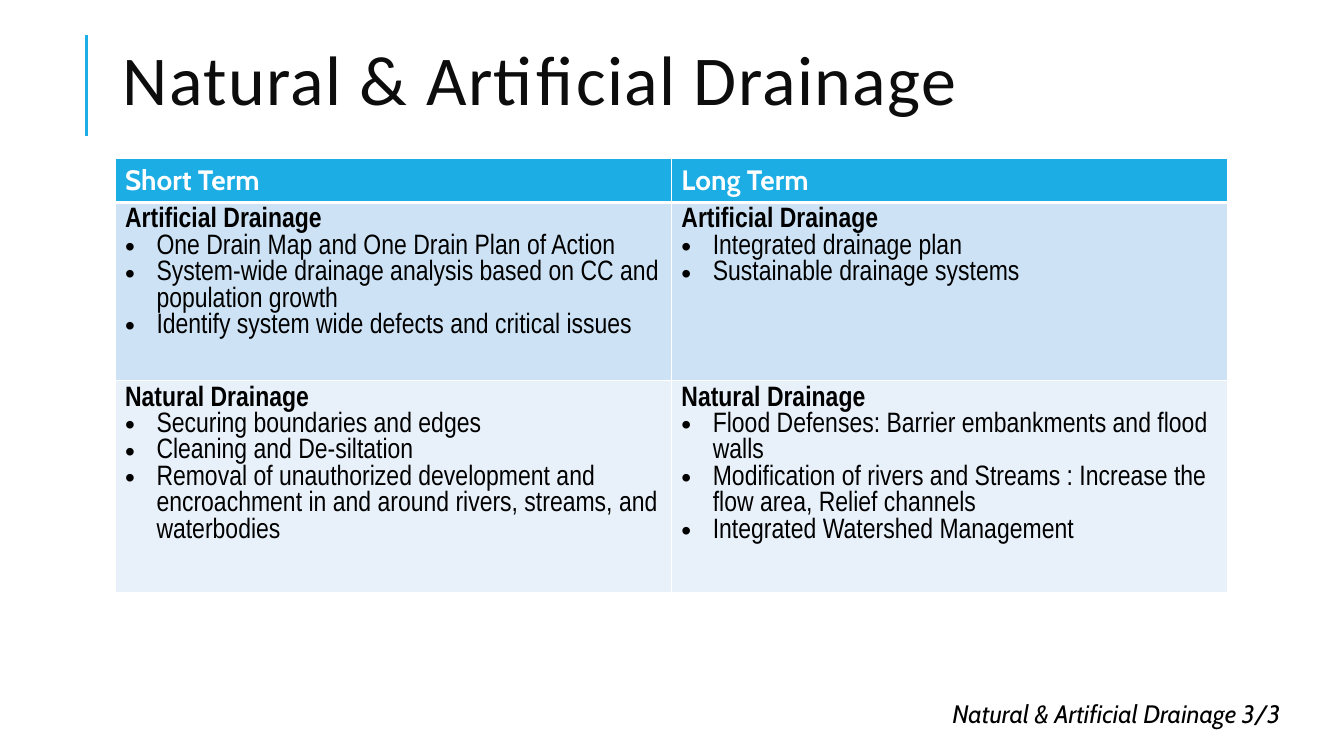
from lxml.etree import SubElement
from pptx import Presentation
from pptx.dml.color import RGBColor
from pptx.enum.shapes import MSO_CONNECTOR as Connector
from pptx.enum.text import MSO_ANCHOR as Anchor, MSO_AUTO_SIZE as AutoSize
from pptx.oxml import parse_xml
from pptx.oxml.ns import nsdecls, qn
from pptx.util import Cm, Pt

WHITE = RGBColor(0xFF, 0xFF, 0xFF)
BLACK = RGBColor(0x00, 0x00, 0x00)
INK = RGBColor(0x0D, 0x0D, 0x0D)
BLUE = RGBColor(0x1C, 0xAD, 0xE4)
BAND_DARK = RGBColor(0xCD, 0xE3, 0xF5)
BAND_LIGHT = RGBColor(0xE8, 0xF1, 0xFA)

TITLE_FONT = {"name": "Calibri", "size": Pt(50), "color": INK}
HEADER_FONT = {"name": "Cabin", "size": Pt(20), "bold": True, "color": WHITE}
GROUP_FONT = {"name": "Arial Narrow", "size": Pt(20), "bold": True, "color": BLACK}
ITEM_FONT = {**GROUP_FONT, "bold": False}
FOOTER_FONT = {"name": "Cabin", "size": Pt(18), "italic": True, "color": BLACK}

TERMS = ["Short Term", "Long Term"]
ACTIONS = [
    ("Artificial Drainage", BAND_DARK, Cm(4.24), [
        ["One Drain Map and One Drain Plan of Action",
         "System‐wide drainage analysis based on CC and population growth",
         "Identify system wide defects and critical issues"],
        ["Integrated drainage plan",
         "Sustainable drainage systems"],
    ]),
    ("Natural Drainage", BAND_LIGHT, Cm(4.9), [
        ["Securing boundaries and edges",
         "Cleaning and De-siltation",
         "Removal of unauthorized development and encroachment in and around "
         "rivers, streams, and waterbodies"],
        ["Flood Defenses: Barrier embankments and flood walls",
         "Modification of rivers and Streams : Increase the flow area, Relief channels",
         "Integrated Watershed Management"],
    ]),
]


def write_run(paragraph, text, font_format):
    run = paragraph.add_run()
    run.text = text
    for name, value in font_format.items():
        if name == "color":
            run.font.color.rgb = value
        else:
            setattr(run.font, name, value)
    return run


def add_bullet(paragraph):
    properties = paragraph._p.get_or_add_pPr()
    properties.set("marL", str(Cm(0.79)))
    properties.set("indent", str(-Cm(0.79)))
    SubElement(properties, qn("a:buFont")).set("typeface", "Arial")
    SubElement(properties, qn("a:buChar")).set("char", "•")


def style_cell(cell, fill_color, bottom_width=1):
    cell.fill.solid()
    cell.fill.fore_color.rgb = fill_color
    widths = {"lnL": 1, "lnR": 1, "lnT": 1, "lnB": bottom_width}
    for position, (side, width) in enumerate(widths.items()):
        border = parse_xml(
            f'<a:{side} {nsdecls("a")} w="{Pt(width)}"><a:solidFill>'
            f'<a:srgbClr val="{WHITE}"/></a:solidFill></a:{side}>')
        cell._tc.get_or_add_tcPr().insert(position, border)


def add_title(slide, left, top, width, height):
    rule_left = left - Cm(0.66)
    rule = slide.shapes.add_connector(
        Connector.STRAIGHT, rule_left, top + height, rule_left, top)
    rule.line.color.rgb = BLUE
    rule.line.width = Pt(1.5)
    SubElement(rule._element.spPr, qn("a:effectLst"))

    frame = slide.shapes.add_textbox(left, top, width, height).text_frame
    frame.word_wrap = True
    frame.vertical_anchor = Anchor.MIDDLE
    paragraph = frame.paragraphs[0]
    paragraph.line_spacing = 0.8
    run = write_run(paragraph, "Natural & Artificial Drainage", TITLE_FONT)
    run.font._element.set("spc", "100")


def add_action_table(slide, left, top, width):
    heights = [Cm(1.11)] + [height for _, _, height, _ in ACTIONS]
    table = slide.shapes.add_table(
        len(heights), len(TERMS), left, top, width, sum(heights)).table
    for row, height in zip(table.rows, heights):
        row.height = height

    for column, term in enumerate(TERMS):
        header = table.cell(0, column)
        style_cell(header, BLUE, bottom_width=3)
        write_run(header.text_frame.paragraphs[0], term, HEADER_FONT)

        for row, (group, band, _, columns) in enumerate(ACTIONS, start=1):
            cell = table.cell(row, column)
            style_cell(cell, band)
            write_run(cell.text_frame.paragraphs[0], group, GROUP_FONT)
            for item in columns[column]:
                paragraph = cell.text_frame.add_paragraph()
                add_bullet(paragraph)
                write_run(paragraph, item, ITEM_FONT)


def add_footer(slide, left, top, width, height):
    frame = slide.shapes.add_textbox(left, top, width, height).text_frame
    frame.word_wrap = False
    frame.auto_size = AutoSize.SHAPE_TO_FIT_TEXT
    write_run(frame.paragraphs[0], "Natural & Artificial Drainage 3/3", FOOTER_FONT)


def main():
    presentation = Presentation()
    presentation.slide_width = Cm(33.87)
    presentation.slide_height = Cm(19.05)
    slide = presentation.slides.add_slide(presentation.slide_layouts[6])
    add_title(slide, Cm(2.84), Cm(0.89), Cm(29.97), Cm(2.54))
    add_action_table(slide, Cm(2.9), Cm(3.99), Cm(28.04))
    add_footer(slide, Cm(23.75), Cm(17.48), Cm(9.04), Cm(1.02))
    presentation.save("out.pptx")


if __name__ == "__main__":
    main()
